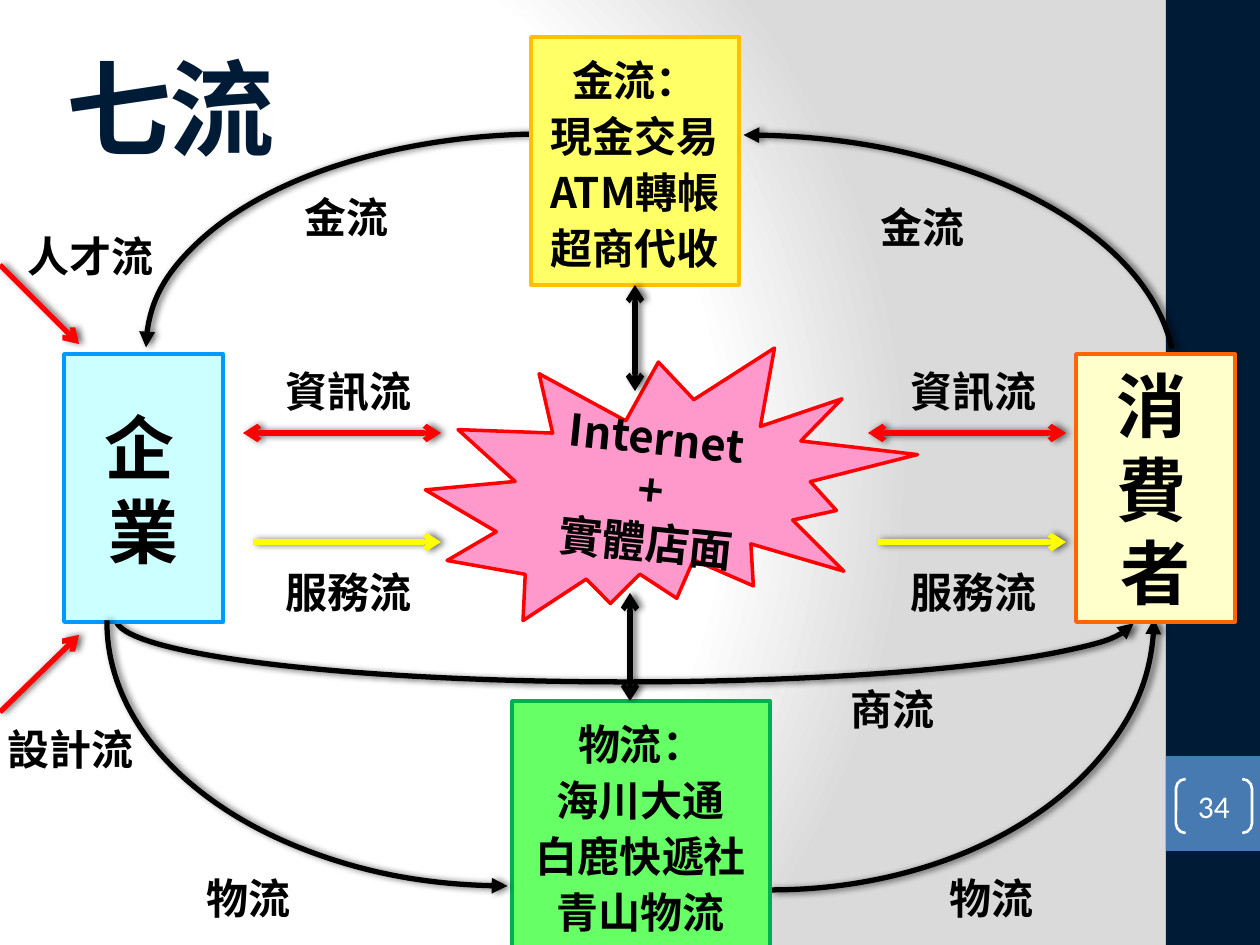
from lxml.etree import SubElement
from pptx import Presentation
from pptx.dml.color import RGBColor
from pptx.enum.shapes import MSO_CONNECTOR, MSO_SHAPE
from pptx.enum.text import MSO_ANCHOR, MSO_AUTO_SIZE, PP_ALIGN
from pptx.oxml import parse_xml
from pptx.oxml.ns import nsdecls, qn
from pptx.util import Pt

SCALE = 914400 / 126
CJK = "Noto Sans CJK SC"
BLACK, RED, YELLOW, WHITE, NAVY = "000000", "FF0000", "FFFF00", "FFFFFF", "001B36"


def px(length):
    return round(length * SCALE)


def colour(value):
    return RGBColor.from_string(value)


def write(shape, text, size, ink=BLACK, align=PP_ALIGN.CENTER, font=CJK,
          bold=True, tracking=0, leading=None):
    frame = shape.text_frame
    frame.text = text
    for para in frame.paragraphs:
        para.alignment = align
        if leading:
            para.line_spacing = Pt(leading)
        for span in para.runs:
            span.font.name = font
            span.font.size = Pt(size)
            span.font.bold = bold
            span.font.color.rgb = colour(ink)
            properties = span.font._element
            SubElement(properties, qn("a:ea"), typeface=font)
            if tracking:
                properties.set("spc", str(tracking * 100))


def add_box(page, kind, box, fill=None, line=None, width=2):
    shape = page.shapes.add_shape(kind, *map(px, box))
    shape.shadow.inherit = False
    shape.text_frame.word_wrap = True
    shape.text_frame.vertical_anchor = MSO_ANCHOR.MIDDLE
    if fill:
        shape.fill.solid()
        shape.fill.fore_color.rgb = colour(fill)
    else:
        shape.fill.background()
    if line:
        shape.line.color.rgb = colour(line)
        shape.line.width = Pt(width)
    else:
        shape.line.fill.background()
    return shape


def style_stroke(shape, ink, head=None, tail=None):
    shape.line.color.rgb = colour(ink)
    shape.line.width = Pt(3)
    stroke = shape.line._get_or_add_ln()
    for tag, end in (("a:headEnd", head), ("a:tailEnd", tail)):
        if end:
            SubElement(stroke, qn(tag), type=end)
    effects = SubElement(shape._element.spPr, qn("a:effectLst"))
    shadow = SubElement(effects, qn("a:outerShdw"), blurRad=str(Pt(4)),
                        dist=str(Pt(2)), dir="0", rotWithShape="0")
    shade = SubElement(shadow, qn("a:srgbClr"), val=BLACK)
    SubElement(shade, qn("a:alpha"), val="60000")


def add_arrow(page, start, end, ink, double=False):
    arrow = page.shapes.add_connector(MSO_CONNECTOR.STRAIGHT, *map(px, start + end))
    style_stroke(arrow, ink, "arrow" if double else None, "arrow")
    return arrow


def add_arc(page, box, start=162, end=0.185, rotation=0, flipped=True):
    arc = page.shapes.add_shape(MSO_SHAPE.ARC, *map(px, box))
    arc.adjustments[0] = start
    arc.adjustments[1] = end
    arc.rotation = rotation
    arc.fill.background()
    if flipped:
        frame = arc._element.spPr.find(qn("a:xfrm"))
        frame.set("flipH", "1")
        frame.set("flipV", "1")
    style_stroke(arc, BLACK, "triangle")


def add_label(page, text, left, top, width=169):
    label = page.shapes.add_textbox(*map(px, (left, top, width, 63)))
    label.text_frame.word_wrap = True
    label.text_frame.auto_size = MSO_AUTO_SIZE.SHAPE_TO_FIT_TEXT
    write(label, text, 24, align=PP_ALIGN.LEFT)


def paint_background(page):
    stops = "".join(
        f'<a:gs pos="{place}"><a:srgbClr val="{value}"/></a:gs>'
        for place, value in ((0, WHITE), (75000, WHITE), (100000, "DADADA")))
    page._element.cSld.insert(0, parse_xml(
        f'<p:bg {nsdecls("p", "a")}><p:bgPr><a:gradFill rotWithShape="1">'
        f'<a:gsLst>{stops}</a:gsLst><a:path path="circle">'
        '<a:fillToRect l="20000" t="50000" r="100000" b="50000"/></a:path>'
        '</a:gradFill><a:effectLst/></p:bgPr></p:bg>'))


def add_side_band(page, box):
    left, top, width, height = box
    add_box(page, MSO_SHAPE.RECTANGLE, box, NAVY)
    add_box(page, MSO_SHAPE.RECTANGLE, (left, top + 756, width, 95), "477AB1")
    number = add_box(page, MSO_SHAPE.DOUBLE_BRACKET,
                     (left + 10, top + 779, 76, 54), line=WHITE, width=1.5)
    number.adjustments[0] = 0.179
    frame = number.text_frame
    frame.margin_left = frame.margin_right = frame.margin_top = frame.margin_bottom = 0
    write(number, "34", 18, WHITE, font="Calibri", bold=False)


def add_title(page, box):
    title = page.shapes.title
    title.left, title.top, title.width, title.height = map(px, box)
    title.text_frame.vertical_anchor = MSO_ANCHOR.MIDDLE
    write(title, "七流", 60, NAVY, PP_ALIGN.LEFT, tracking=-1)


def add_party(page, text, box, fill, line):
    party = add_box(page, MSO_SHAPE.RECTANGLE, box, fill, line)
    write(party, text, 40, tracking=5)


def add_service_list(page, lines, box, fill, line):
    services = add_box(page, MSO_SHAPE.RECTANGLE, box, fill, line)
    write(services, "\n".join(lines), 24, leading=32)
    return services


def add_hub(page, box):
    hub = add_box(page, MSO_SHAPE.EXPLOSION2, box, "FF99CC", RED)
    hub.rotation = 5.9
    write(hub, "Internet\n+\n實體店面", 25)


def add_channel(page, left, top):
    right = left + 198
    add_arrow(page, (left, top + 74), (right, top + 74), RED, double=True)
    add_label(page, "資訊流", left + 30, top)
    add_arrow(page, (left + 10, top + 183), (right, top + 183), YELLOW)
    add_label(page, "服務流", left + 30, top + 201)


def add_input(page, text, start, end, label_at):
    add_arrow(page, start, end, RED)
    add_label(page, text, *label_at)


def main():
    deck = Presentation()
    deck.slide_width, deck.slide_height = px(1260), px(945)
    page = deck.slides.add_slide(deck.slide_layouts[5])
    paint_background(page)
    add_side_band(page, (1166, 0, 94, 945))
    add_arc(page, (116, 556, 1019, 126), start=108.297)
    add_arc(page, (500, 236, 543, 765), rotation=270)
    add_arc(page, (333, -53, 427, 801), rotation=90)
    add_arc(page, (312, 135, 863, 486), end=213.66, flipped=False)
    add_title(page, (54, 28, 1050, 158))
    add_party(page, "企業", (64, 354, 159, 268), "CCFFFF", "0099FF")
    add_party(page, "消費者", (1076, 354, 159, 268), "FFFFCC", "FF6600")
    payment = add_service_list(
        page, ("金流：", "現金交易", "ATM轉帳", "超商代收"),
        (531, 37, 208, 248), "FFFF66", "FFC000")
    add_service_list(
        page, ("物流：", "海川大通", "白鹿快遞社", "青山物流"),
        (512, 701, 258, 248), "66FF66", "00B050")
    add_hub(page, (427, 338, 486, 297))
    for left in (243, 868):
        add_channel(page, left, 359)
    add_input(page, "人才流", (0, 265), (79, 344), (15, 224))
    add_input(page, "設計流", (0, 712), (79, 635), (-5, 717))
    for text, left, top in (("物流", 194, 866), ("商流", 838, 677), ("金流", 292, 185),
                            ("金流", 868, 195), ("物流", 937, 866)):
        add_label(page, text, left, top)
    add_arc(page, (107, 359, 801, 527))
    payment_link = add_arrow(page, (635, 285), (635, 391), BLACK, double=True)
    payment_link.begin_connect(payment, 2)
    add_arrow(page, (630, 593), (630, 701), BLACK, double=True)
    deck.save("out.pptx")


if __name__ == "__main__":
    main()
